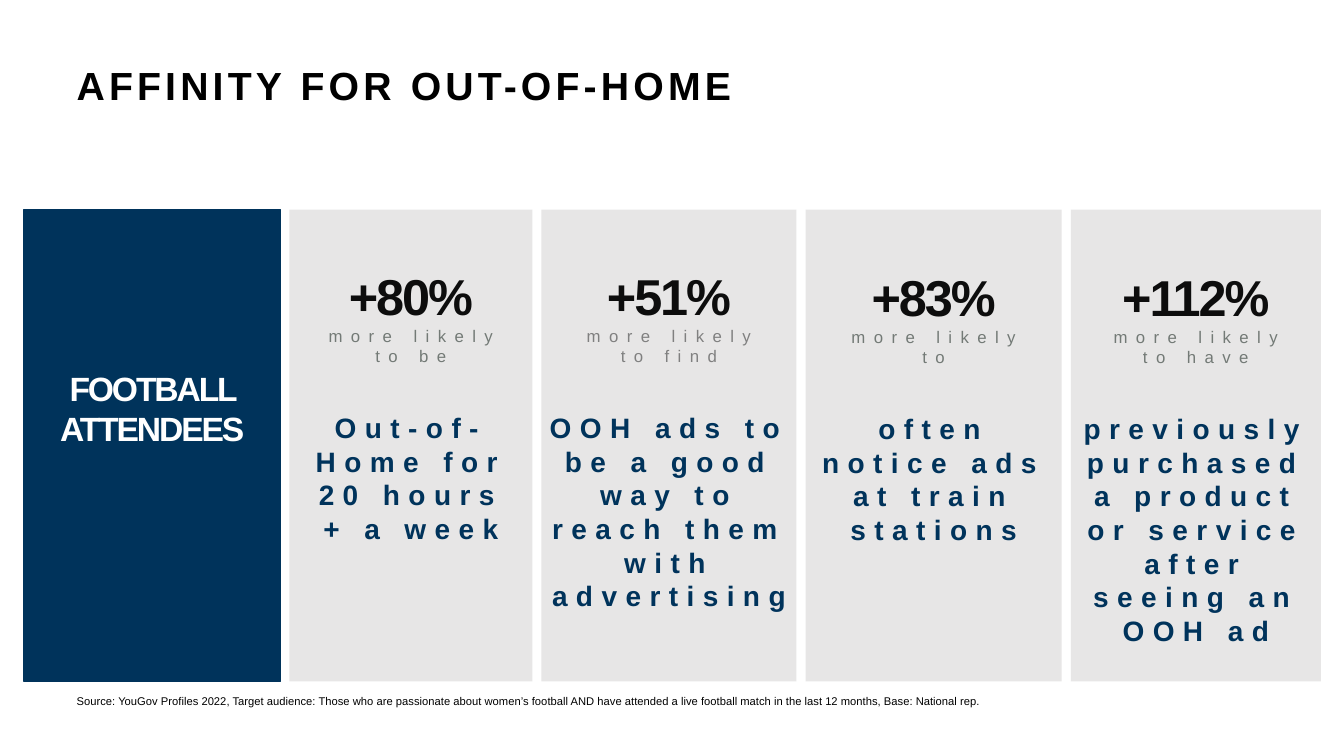
from dataclasses import dataclass

from pptx import Presentation
from pptx import util as u
from pptx.dml.color import RGBColor
from pptx.enum import shapes, text


@dataclass(frozen=True)
class Theme:
    font: str = "Arial"
    navy: str = "00335B"
    panel: str = "E7E6E6"
    white: str = "FFFFFF"
    black: str = "000000"
    figure: str = "0D0D0D"
    grey: str = "737A76"
    mid_grey: str = "808080"
    title_size: int = 28
    figure_size: int = 36
    lead_size: int = 12
    claim_size: int = 20
    label_size: int = 24
    source_size: int = 8


T = Theme()
LEFT, TOP, HEIGHT, GAP = 0.24, 2.08, 4.68, 0.09
LABEL_WIDTH = 2.54
CLAIM_SPACE = 32
# panel width, text top, text overhang, lead colour, figure, lead lines, claim
PANELS = [
    (2.41, 2.58, 0, T.grey, "+80%", ("more likely", "to be"),
     "Out-of-Home for 20 hours + a week"),
    (2.53, 2.58, 0.05, T.mid_grey, "+51%", ("more likely", "to find"),
     "OOH ads to be a good way to reach them with advertising"),
    (2.54, 2.59, 0, T.grey, "+83%", ("more likely", "to"),
     "often notice ads at train stations"),
    (2.48, 2.59, 0, T.grey, "+112%", ("more likely", "to have"),
     "previously purchased a product or service after seeing an OOH ad"),
]
SOURCE = ("Source: YouGov Profiles 2022, Target audience: Those who are passionate "
          "about women’s football AND have attended a live football match in the "
          "last 12 months, Base: National rep.")


def write(p, words, size, color, bold=False, spacing=0, align="CENTER",
          before=0, line=None):
    """Fill a paragraph with one run; spacing is letter spacing in points."""
    p.alignment = getattr(text.PP_ALIGN, align)
    p.space_before = u.Pt(before)
    if line:
        p.line_spacing = line
    r = p.add_run()
    r.text = words
    r.font.name = T.font
    r.font.size = u.Pt(size)
    r.font.bold = bold
    r.font.color.rgb = RGBColor.from_string(color)
    if spacing:
        r._r.get_or_add_rPr().set("spc", str(int(spacing * 100)))


def setup_frame(tf, inset=None):
    tf.word_wrap = True
    tf.auto_size = text.MSO_AUTO_SIZE.NONE
    tf.vertical_anchor = text.MSO_ANCHOR.TOP
    if inset is not None:
        tf.margin_left = tf.margin_right = u.Inches(inset)
        tf.margin_top = tf.margin_bottom = u.Inches(inset)
    return tf


def add_text_frame(s, left, top, width, height, inset=None):
    box = s.shapes.add_textbox(*map(u.Inches, (left, top, width, height)))
    return setup_frame(box.text_frame, inset)


def add_panel(s, left, width, color):
    sp = s.shapes.add_shape(shapes.MSO_SHAPE.RECTANGLE,
                            *map(u.Inches, (left, TOP, width, HEIGHT)))
    sp.shadow.inherit = False
    sp.fill.solid()
    sp.fill.fore_color.rgb = RGBColor.from_string(color)
    sp.line.fill.background()
    return sp


def add_title(s, words):
    title = s.shapes.title
    title.left, title.top = u.Inches(0.76), u.Inches(0.68)
    title.width, title.height = u.Inches(11.81), u.Inches(1.1)
    tf = setup_frame(title.text_frame, 0)
    write(tf.paragraphs[0], words, T.title_size, T.black, bold=True,
          spacing=3, align="LEFT", line=0.85)


def add_label(s, words):
    sp = add_panel(s, LEFT, LABEL_WIDTH, T.navy)
    sp.line.color.rgb = RGBColor.from_string(T.navy)
    sp.line.width = u.Pt(1)
    tf = add_text_frame(s, LEFT, 3.6, LABEL_WIDTH, 1.47)
    write(tf.paragraphs[0], words, T.label_size, T.white, bold=True, spacing=-1.5)


def add_stat(s, left, width, top, overhang, lead_color, figure, lead, claim):
    add_panel(s, left, width, T.panel)
    tf = add_text_frame(s, left - overhang, top, width + 2 * overhang, 3.4)
    write(tf.paragraphs[0], figure, T.figure_size, T.figure, bold=True, spacing=-1.5)
    for words in lead:
        write(tf.add_paragraph(), words, T.lead_size, lead_color, spacing=6)
    write(tf.add_paragraph(), claim, T.claim_size, T.navy, bold=True,
          spacing=6, before=CLAIM_SPACE)


def main():
    prs = Presentation()
    prs.slide_width, prs.slide_height = u.Inches(13.33), u.Inches(7.5)
    s = prs.slides.add_slide(prs.slide_layouts.get_by_name("Title Only"))
    add_title(s, "AFFINITY FOR OUT-OF-HOME")
    add_label(s, "FOOTBALL ATTENDEES")
    left = LEFT + LABEL_WIDTH + GAP
    for width, *content in PANELS:
        add_stat(s, left, width, *content)
        left += width + GAP
    source = add_text_frame(s, 0.76, 6.9, 11.81, 0.39, inset=0)
    write(source.paragraphs[0], SOURCE, T.source_size, T.black,
          align="LEFT", line=0.9)
    prs.save("out.pptx")


if __name__ == "__main__":
    main()
